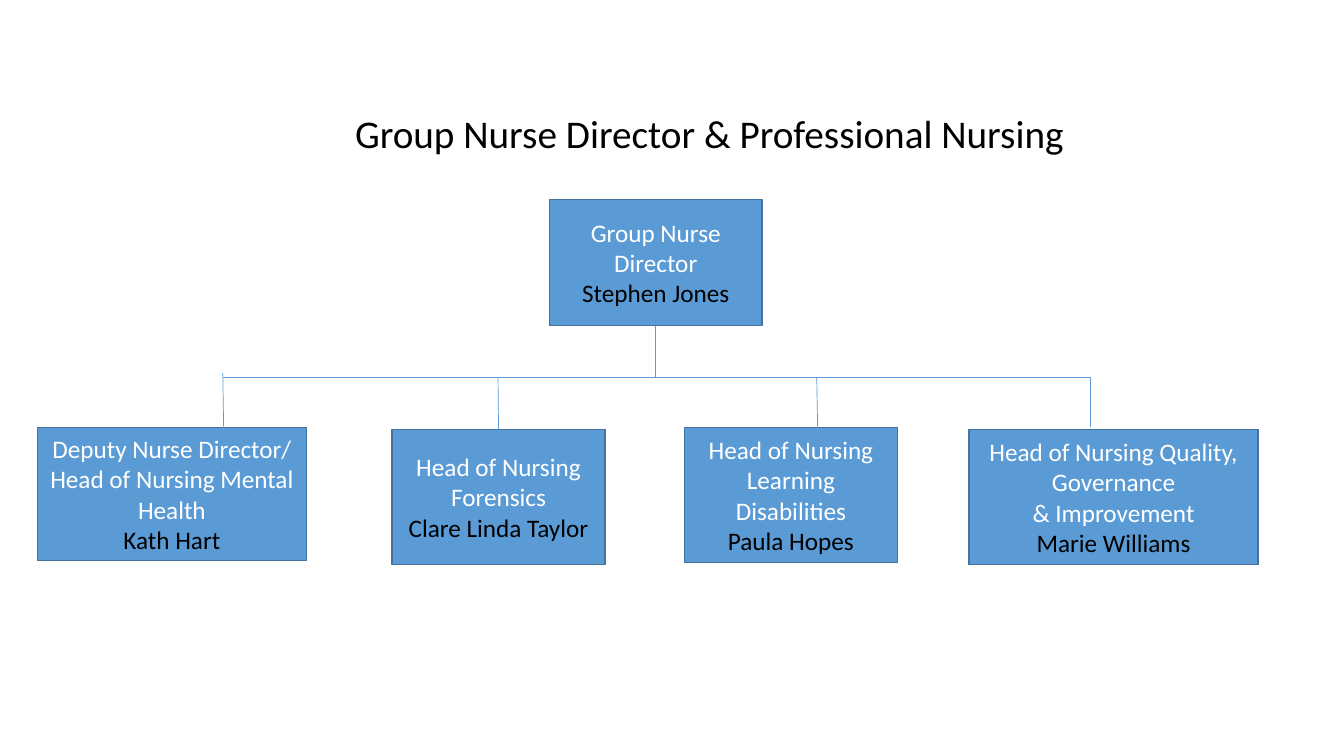
from lxml import etree
from pptx import Presentation
from pptx import util as u
from pptx.dml.color import RGBColor
from pptx.enum import shapes, text
from pptx.oxml.ns import qn

WIDTH, HEIGHT = u.Inches(13.33), u.Inches(7.5)
FONT = "Calibri"
BLUE, EDGE, WHITE, BLACK = "5B9BD5", "43739E", "FFFFFF", "000000"
TOP, LEFT, BOTTOM = 0, 1, 2

# All lengths are percentages of the slide's width or height.
BUS_Y = 49.87
TITLE = (12, 13.87, 81.55, 13.87)
DIRECTOR = (40.88, 26.4, 15.83, 16.67)

# Role lines, name, box, stem start, stem end (None: middle of the box's top)
HEADS = [
    (["Deputy Nurse Director/ Head of Nursing Mental Health"], "Kath Hart",
     (2.78, 56.53, 20.03, 17.6), (16.58, 49.33), (16.65, 57.6)),
    (["Head of Nursing", "Forensics"], "Clare Linda Taylor",
     (29.18, 56.8, 15.83, 17.87), (37.06, 50), None),
    (["Head of Nursing Learning Disabilities"], "Paula Hopes",
     (50.94, 56.53, 15.83, 17.87), (60.77, BUS_Y), (60.84, 56.8)),
    (["Head of Nursing Quality, Governance", "& Improvement"], "Marie Williams",
     (72.09, 56.8, 21.53, 17.87), (81.1, BUS_Y), (81.1, 56.53)),
]


def rgb(value):
    return RGBColor.from_string(value)


def share(*percents):
    """Turn alternating x and y percentages into slide lengths."""
    return [u.Emu(round(p * (HEIGHT if i % 2 else WIDTH) / 100))
            for i, p in enumerate(percents)]


def write(tf, lines, size):
    """Fill a text frame with centred (words, colour) paragraphs."""
    tf.word_wrap = True
    tf.text = "\n".join(words for words, _ in lines)
    for p, (_, color) in zip(tf.paragraphs, lines):
        p.alignment = text.PP_ALIGN.CENTER
        font = p.runs[0].font
        font.name, font.size = FONT, u.Pt(size)
        font.color.rgb = rgb(color)


def add_title(s, words):
    tf = s.shapes.add_textbox(*share(*TITLE)).text_frame
    write(tf, [(words, BLACK)], 28)


def add_post(s, role, name, box):
    """Draw one post: white role lines above the holder's name in black."""
    sp = s.shapes.add_shape(shapes.MSO_SHAPE.RECTANGLE, *share(*box))
    sp.shadow.inherit = False
    sp.fill.solid()
    sp.fill.fore_color.rgb = rgb(BLUE)
    sp.line.color.rgb = rgb(EDGE)
    sp.line.width = u.Pt(1)
    sp.text_frame.vertical_anchor = text.MSO_ANCHOR.MIDDLE
    write(sp.text_frame, [(words, WHITE) for words in role] + [(name, BLACK)], 18)
    return sp


def add_line(s, start, end):
    line = s.shapes.add_connector(shapes.MSO_CONNECTOR.STRAIGHT,
                                  *share(*start, *end))
    line.line.color.rgb = rgb(BLUE)
    line.line.width = u.Pt(0.5)
    etree.SubElement(line._element.spPr, qn("a:effectLst"))
    return line


def main():
    prs = Presentation()
    prs.slide_width, prs.slide_height = WIDTH, HEIGHT
    s = prs.slides.add_slide(prs.slide_layouts[6])

    add_title(s, "Group Nurse Director & Professional Nursing")
    director = add_post(s, ["Group Nurse Director"], "Stephen Jones", DIRECTOR)
    left, top, width, height = DIRECTOR
    middle = left + width / 2
    trunk = add_line(s, (middle, top + height), (middle, BUS_Y))
    trunk.begin_connect(director, BOTTOM)

    add_line(s, (HEADS[0][3][0], BUS_Y), (HEADS[-1][3][0], BUS_Y))
    for role, name, box, start, end in HEADS:
        post = add_post(s, role, name, box)
        stem = add_line(s, start, end or (start[0], box[1]))
        if end is None:
            stem.end_connect(post, TOP)

    prs.save("out.pptx")


if __name__ == "__main__":
    main()
